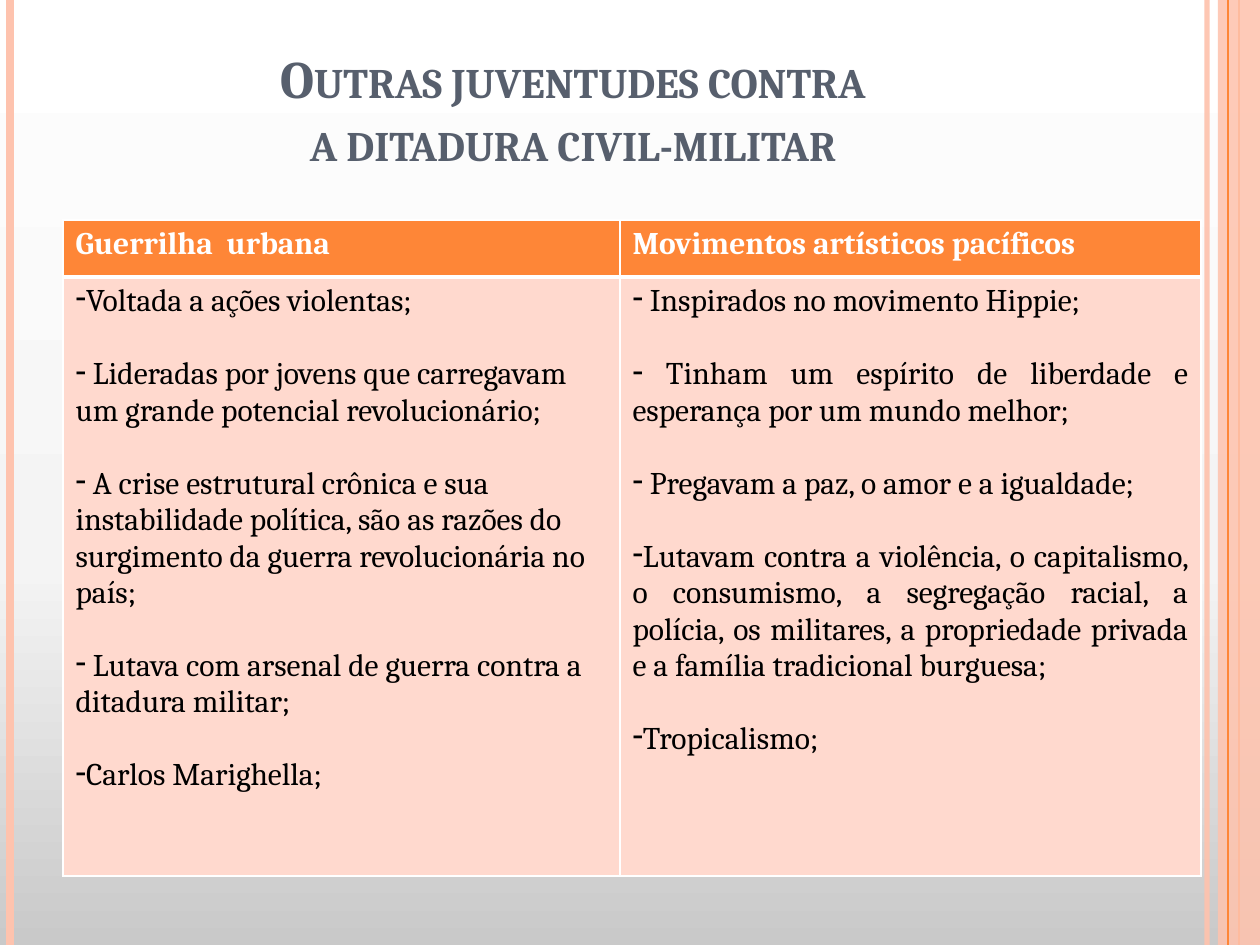
from lxml import etree
from pptx import Presentation, util as u
from pptx.dml.color import RGBColor
from pptx.enum import shapes, text
from pptx.oxml.ns import qn

PX = u.Inches(1) / 126
THEME = {
    "font": "Cambria", "title": 30, "body": 18, "gap": 21,
    "slate": "575F6D", "orange": "FE8637", "peach": "FEC3AE", "pale": "FFD9CE",
    "white": "FFFFFF", "black": "000000",
    "back": [(0, "C9C9C9"), (40, "F4F4F4"), (100, "FFFFFF")],
}
WIDE, HIGH = 1260, 945


def px(*nums):
    return [u.Emu(round(n * PX)) for n in nums]


def write(frame, lines, size, color, bold=False, align=None, gap=0, dash=False, caps=False):
    """Fill a text frame, one paragraph for each line; a vertical tab breaks a line."""
    for i, line in enumerate(lines):
        para = frame.paragraphs[0] if i == 0 else frame.add_paragraph()
        para.text = line
        para.alignment = align
        para.space_before = u.Pt(gap if i else 0)
        if dash:
            props = para._p.get_or_add_pPr()
            props.set("marL", "0")
            props.set("indent", "0")
            etree.SubElement(props, qn("a:buChar"), char="-")
        for run in para.runs:
            font = run.font
            font.name, font.size, font.bold = THEME["font"], u.Pt(size), bold
            font.color.rgb = RGBColor.from_string(color)
            if caps:
                run._r.get_or_add_rPr().set("cap", "small")
        for brk in para._p.findall(qn("a:br")):
            etree.SubElement(brk, qn("a:rPr"), sz=str(size * 100))


deck = Presentation()
deck.slide_width, deck.slide_height = px(WIDE, HIGH)
slide = deck.slides.add_slide(deck.slide_layouts[5])

# Background, grey at the foot and white at the top
fill = slide.background.fill
fill.gradient()
fill.gradient_angle = 90
stops = fill._fill._gradFill.find(qn("a:gsLst"))
for old in list(stops):
    stops.remove(old)
for pos, color in THEME["back"]:
    stop = etree.SubElement(stops, qn("a:gs"), pos=str(pos * 1000))
    etree.SubElement(stop, qn("a:srgbClr"), val=color)

# Side band and upright rules
band = slide.shapes.add_shape(shapes.MSO_SHAPE.RECTANGLE, *px(1218, 0, 42, HIGH))
band.shadow.inherit = False
band.fill.solid()
band.fill.fore_color.rgb = RGBColor.from_string(THEME["peach"])
band.line.fill.background()
tint = band._element.spPr.find(".//" + qn("a:srgbClr"))
etree.SubElement(tint, qn("a:alpha"), val="87000")

for x, color, width, alpha in [
    (1207, "peach", 3, 93),
    (10, "peach", 4.5, 100),
    (1239, "orange", 1.5, 100),
    (1228, "orange", 0.75, 100),
]:
    rule = slide.shapes.add_connector(shapes.MSO_CONNECTOR.STRAIGHT, *px(x, 0, x, HIGH))
    rule.line.width = u.Pt(width)
    rule.line.color.rgb = RGBColor.from_string(THEME[color])
    props = rule._element.spPr
    if alpha < 100:
        tint = props.find(".//" + qn("a:srgbClr"))
        etree.SubElement(tint, qn("a:alpha"), val=str(alpha * 1000))
    etree.SubElement(props, qn("a:effectLst"))
    if x == 1239:  # this rule lies under the band
        band._element.addprevious(rule._element)

# Title
title = slide.shapes.title
title.left, title.top, title.width, title.height = px(63, 38, 1029, 140)
frame = title.text_frame
frame.auto_size = text.MSO_AUTO_SIZE.NONE
frame.vertical_anchor = text.MSO_ANCHOR.BOTTOM
write(frame, ["Outras juventudes contra \va ditadura civil-militar "], THEME["title"],
      THEME["slate"], bold=True, align=text.PP_ALIGN.CENTER, caps=True)

# Comparison table
COLS = [
    (557, "Guerrilha  urbana", text.PP_ALIGN.LEFT, [
        "Voltada a ações violentas;",
        " Lideradas por jovens que carregavam um grande potencial revolucionário;",
        " A crise estrutural crônica e sua instabilidade política, são as razões do "
        "surgimento da guerra revolucionária no país;",
        " Lutava com arsenal de guerra contra a ditadura militar;",
        "Carlos Marighella;",
    ]),
    (581, "Movimentos artísticos pacíficos", text.PP_ALIGN.JUSTIFY, [
        " Inspirados no movimento Hippie;",
        " Tinham um espírito de liberdade e esperança por um mundo melhor;",
        " Pregavam a paz, o amor e a igualdade; ",
        "Lutavam contra a violência, o capitalismo, o consumismo, a segregação racial, "
        "a polícia, os militares, a propriedade privada e a família tradicional burguesa;",
        "Tropicalismo; ",
    ]),
]
ROWS = [57, 599]
wide = sum(col[0] for col in COLS)
table = slide.shapes.add_table(2, 2, *px(63, 220, wide, sum(ROWS))).table
for row, high in zip(table.rows, ROWS):
    row.height = px(high)[0]

for c, (width, head, align, points) in enumerate(COLS):
    table.columns[c].width = px(width)[0]
    top, low = table.cell(0, c), table.cell(1, c)
    write(top.text_frame, [head], THEME["body"], THEME["white"], bold=True)
    write(low.text_frame, points, THEME["body"], THEME["black"], align=align,
          gap=THEME["gap"], dash=True)
    for cell, color in [(top, "orange"), (low, "pale")]:
        props = cell._tc.get_or_add_tcPr()
        for side in "LRTB":
            thick = (cell is top and side == "B") or (cell is low and side == "T")
            edge = etree.SubElement(props, qn("a:ln" + side), w=str(u.Pt(3 if thick else 1)))
            paint = etree.SubElement(edge, qn("a:solidFill"))
            etree.SubElement(paint, qn("a:srgbClr"), val=THEME["white"])
        cell.fill.solid()
        cell.fill.fore_color.rgb = RGBColor.from_string(THEME[color])

deck.save("out.pptx")
